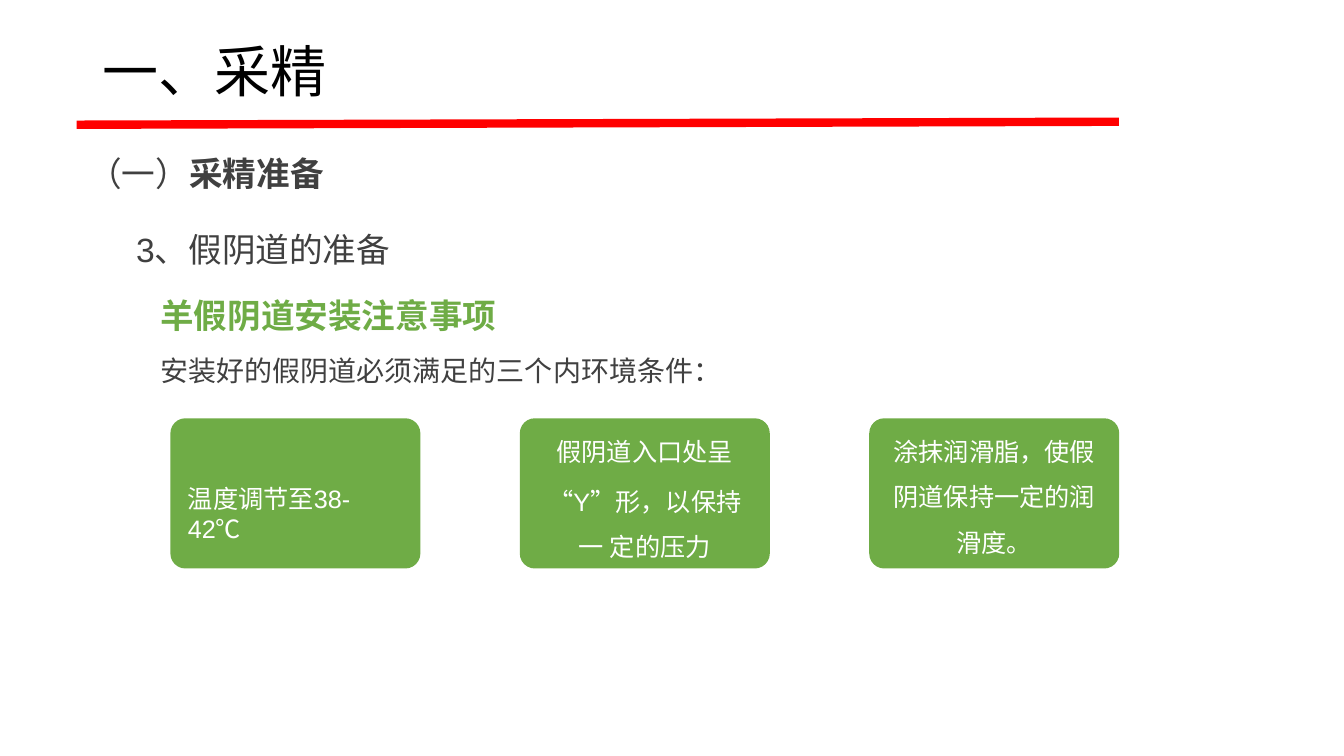
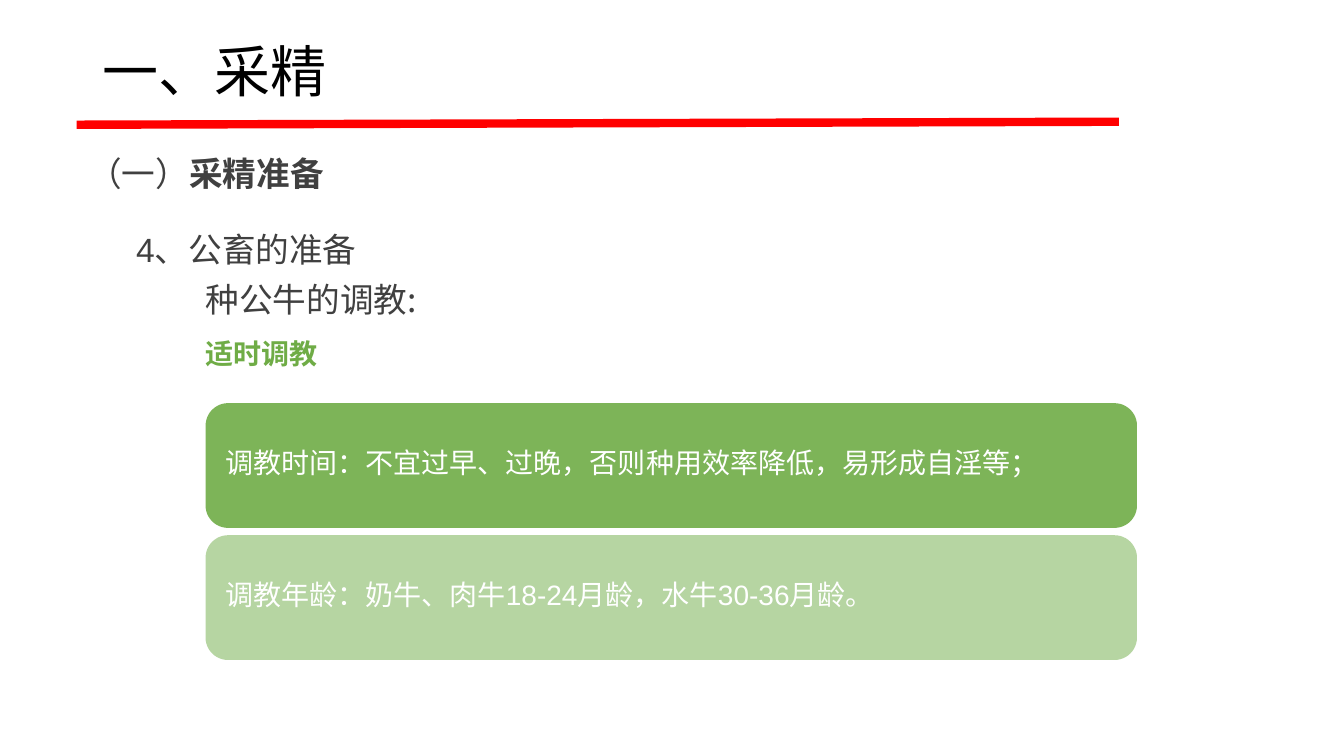
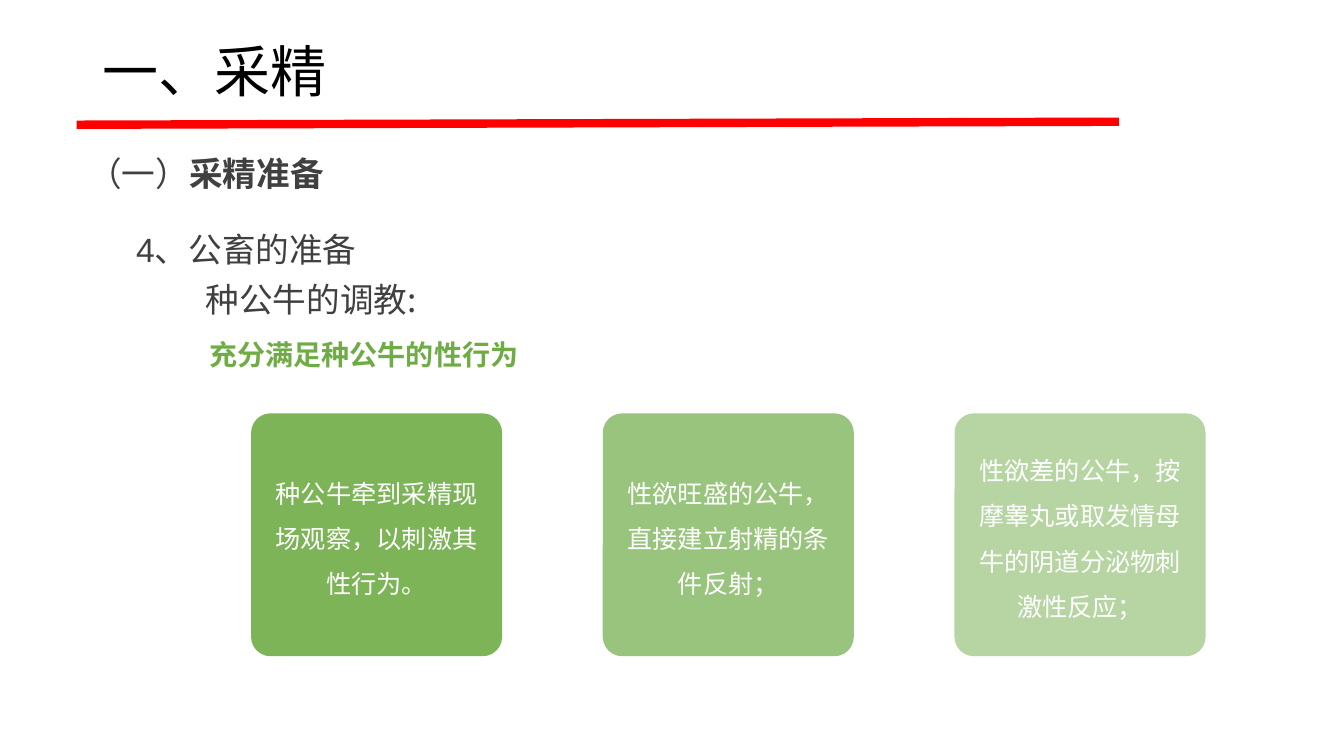
from lxml import etree
from pptx import Presentation
from pptx.dml.color import RGBColor
from pptx.enum.shapes import MSO_CONNECTOR, MSO_SHAPE
from pptx.enum.text import MSO_ANCHOR, PP_ALIGN
from pptx.oxml.ns import qn
from pptx.util import Inches, Pt

# Shared look
CJK, LATIN = "Noto Sans CJK SC", "Arial"
BLACK, GREY, GREEN, RED, WHITE = "000000", "404040", "6FAC46", "FF0000", "FFFFFF"
LEFT, CENTER = PP_ALIGN.LEFT, PP_ALIGN.CENTER
TOP, MIDDLE = MSO_ANCHOR.TOP, MSO_ANCHOR.MIDDLE

deck = Presentation()
deck.slide_width, deck.slide_height = Inches(13.33), Inches(7.5)
# Places are given in hundredths of the slide's width and height
COL, ROW = deck.slide_width / 100, deck.slide_height / 100


def paint(fill, color, opacity=100):
    fill.solid()
    fill.fore_color.rgb = RGBColor.from_string(color)
    if opacity < 100:
        srgb = fill._xPr.find(".//" + qn("a:srgbClr"))
        etree.SubElement(srgb, qn("a:alpha"), val=str(opacity * 1000))


def write(slide, words, at=None, shape=None, size=24, color=GREY, bold=False,
          latin=LATIN, align=LEFT, anchor=TOP, line=None, before=None,
          insets=(0, 0.01, 0, 0), joined=False):
    """Write words in a new box at a place, or in a shape; joined adds a run."""
    if shape is None:
        x, y, w, h = at
        shape = slide.shapes.add_textbox(int(x * COL), int(y * ROW), int(w * COL), int(h * ROW))
    frame = shape.text_frame
    if joined:
        par = frame.paragraphs[-1]
    else:
        par = frame.add_paragraph() if frame.text else frame.paragraphs[0]
        par.alignment, par.line_spacing, par.space_before = align, line, before
        frame.word_wrap, frame.vertical_anchor = True, anchor
        (frame.margin_left, frame.margin_top,
         frame.margin_right, frame.margin_bottom) = map(Inches, insets)
    run = par.add_run()
    run.text = words
    font = run.font
    font.size, font.bold, font.name = Pt(size), bold, latin
    paint(font.fill, color)
    east_asian = etree.Element(qn("a:ea"), typeface=CJK)
    font._element.find(qn("a:latin")).addnext(east_asian)
    return shape


# Each page: item, lines (words, place, format), card grid and cards.
# A card holds its opacity, side inset, top and bottom inset, alignment
# and paragraphs; a paragraph is a list of (words, latin font).
BULL_ITEM = "4、公畜的准备"
BULL_LINE = ("种公牛的调教:", (15.3, 36.8, 19.2, 5.7), dict(latin=CJK))
TOPIC = dict(size=20, color=GREEN, bold=True)
pages = [
    dict(
        item="3、假阴道的准备",
        lines=[
            ("羊假阴道安装注意事项", (11.93, 38.93, 28.4, 5.6), dict(color=GREEN, bold=True)),
            ("安装好的假阴道必须满足的三个内环境条件：", (11.93, 46.67, 42.5, 4.8), dict(size=20)),
        ],
        grid=dict(start=(12.68, 55.33), step=(26, 0), card=(18.6, 19.87), corner=0.1),
        size=18,
        cards=[
            (100, 0.13, (0.39, 0), LEFT, None, [[("温度调节至38-42", LATIN), ("℃", CJK)]]),
            (100, 0.19, (0.11, 0), CENTER, None,
             [[("假阴道入口处呈", CJK)],
              [("“", CJK), ("Y", LATIN), ("”形，以保持一 定的压力", CJK)]]),
            (100, 0.19, (0, 0.08), CENTER, 1.5, [[("涂抹润滑脂，使假 阴道保持一定的润 滑度。", CJK)]]),
        ],
    ),
    dict(
        item=BULL_ITEM,
        lines=[BULL_LINE, ("适时调教", (15.3, 44.4, 12, 4.7), TOPIC)],
        grid=dict(start=(15.3, 53.33), step=(0, 17.47), card=(69.3, 16.5), corner=0.18),
        size=20,
        cards=[
            (90, 0.13, (0, 0.06), LEFT, None, [[("调教时间：不宜过早、过晚，否则种用效率降低，易形成自淫等；", CJK)]]),
            (50, 0.13, (0, 0.06), LEFT, None, [[("调教年龄：奶牛、肉牛18-24月龄，水牛30-36月龄。", LATIN)]]),
        ],
    ),
    dict(
        item=BULL_ITEM,
        lines=[BULL_LINE, ("充分满足种公牛的性行为", (15.6, 44.5, 32.3, 4.7), TOPIC)],
        grid=dict(start=(18.68, 54.67), step=(26.17, 0), card=(18.68, 32.13), corner=0.08),
        size=18,
        cards=[
            (opacity, 0.17, (0, 0.08), CENTER, 1.5, [[(words, CJK)]])
            for opacity, words in [
                (90, "种公牛牵到采精现 场观察，以刺激其 性行为。"),
                (70, "性欲旺盛的公牛， 直接建立射精的条 件反射；"),
                (50, "性欲差的公牛，按 摩睾丸或取发情母 牛的阴道分泌物刺 激性反应；"),
            ]
        ],
    ),
]

for page in pages:
    slide = deck.slides.add_slide(deck.slide_layouts[6])

    # Title with its red rule
    write(slide, "一、采精", (6.9, 0.2, 86.3, 19.3), size=40, color=BLACK, anchor=MIDDLE,
          line=0.9, insets=(0.1, 0.05, 0.1, 0.05))
    rule = slide.shapes.add_connector(MSO_CONNECTOR.STRAIGHT, int(5.7 * COL), int(16.5 * ROW),
                                      int(83.25 * COL), int(16.1 * ROW))
    paint(rule.line.fill, RED)
    rule.line.width = Pt(6)
    etree.SubElement(rule._element.spPr, qn("a:effectLst"))

    # Section, item and lead lines
    section = write(slide, "（一）", (4.7, 19.6, 79.7, 8.3), insets=(0.25, 0.05, 0.1, 0.05))
    write(slide, "采精准备", shape=section, bold=True, joined=True)
    write(slide, page["item"], (10.13, 30.13, 21.6, 5.7))
    for words, place, style in page["lines"]:
        write(slide, words, place, **style)

    # Cards
    grid = page["grid"]
    (x, y), (dx, dy), (w, h) = grid["start"], grid["step"], grid["card"]
    for i, (opacity, side, (above, below), align, spacing, paragraphs) in enumerate(page["cards"]):
        card = slide.shapes.add_shape(MSO_SHAPE.ROUNDED_RECTANGLE, int((x + i * dx) * COL),
                                      int((y + i * dy) * ROW), int(w * COL), int(h * ROW))
        card.adjustments[0] = grid["corner"]
        card.shadow.inherit = False
        card.line.fill.background()
        paint(card.fill, GREEN, opacity)
        for row, runs in enumerate(paragraphs):
            for part, (words, latin) in enumerate(runs):
                write(slide, words, shape=card, size=page["size"], color=WHITE, latin=latin,
                      align=align, anchor=MIDDLE, line=Pt(32.4) if row else spacing,
                      before=Pt(2.9) if row else None,
                      insets=(side, above, side, below), joined=part > 0)

deck.save("out.pptx")
